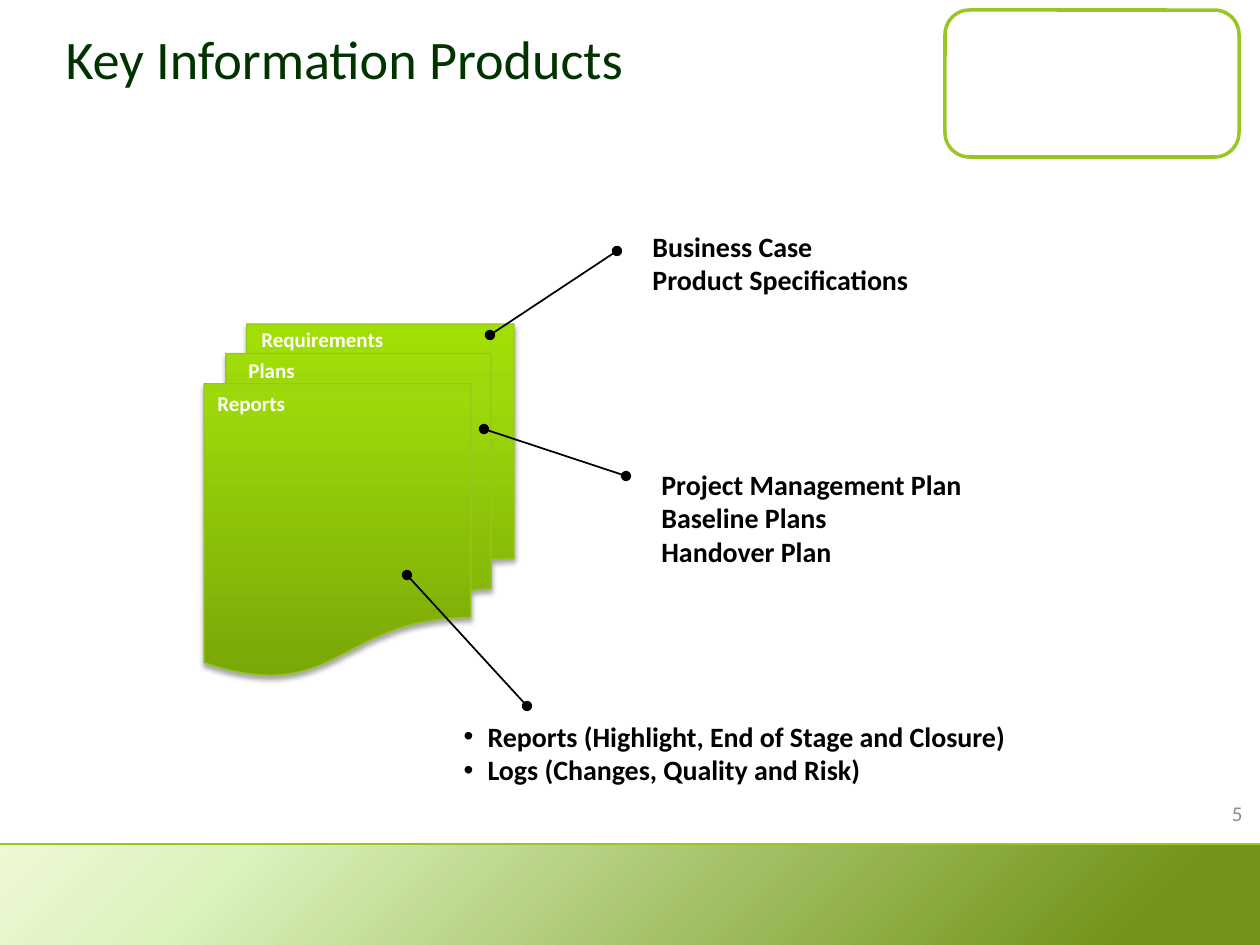
from dataclasses import dataclass

from lxml import etree
from pptx import Presentation
from pptx import util as u
from pptx.dml.color import RGBColor
from pptx.enum import shapes, text
from pptx.oxml.ns import qn

EMU_PER_PX = 914400 / 126


@dataclass(frozen=True)
class Theme:
    font: str = "Calibri"
    title_size: float = 31
    body_size: float = 16
    small_size: float = 12
    title: str = "003300"
    ink: str = "000000"
    paper: str = "FFFFFF"
    muted: str = "8C8C8C"
    accent: str = "98C723"
    edge: str = "96C71E"
    band: tuple = ((0, "EEF8D5"), (19, "DAF2BC"), (89, "72951A"))
    pages: tuple = ((0, "79A708"), (80, "9DD90A"), (100, "A0DE06"))


def px(*lengths):
    return [u.Emu(round(n * EMU_PER_PX)) for n in lengths]


def child(parent, tag, **attributes):
    return etree.SubElement(parent, qn(tag), {k: str(v) for k, v in attributes.items()})


def write(frame, lines, *, font, size, color, bold=False, align=text.PP_ALIGN.LEFT,
          anchor=text.MSO_ANCHOR.TOP, wrap=True, bullet_indent=0):
    """Fill a text frame with one paragraph per line."""
    frame.auto_size = text.MSO_AUTO_SIZE.NONE
    frame.word_wrap = wrap
    frame.vertical_anchor = anchor
    for i, line in enumerate(lines):
        paragraph = frame.paragraphs[0] if i == 0 else frame.add_paragraph()
        paragraph.alignment = align
        paragraph.space_before = u.Pt(0)
        if bullet_indent:
            indent = px(bullet_indent)[0]
            properties = paragraph._p.get_or_add_pPr()
            properties.set("marL", str(indent))
            properties.set("indent", str(-indent))
            child(properties, "a:buFont", typeface="Arial")
            child(properties, "a:buChar", char="•")
        run = paragraph.add_run()
        run.text = line
        run.font.name = font
        run.font.size = u.Pt(size)
        run.font.bold = bold
        run.font.color.rgb = RGBColor.from_string(color)


class SlideBuilder:
    def __init__(self, slide, theme):
        self.slide = slide
        self.theme = theme

    def placeholder(self, index, box, lines, **style):
        holder = self.slide.placeholders[index]
        holder.left, holder.top, holder.width, holder.height = px(*box)
        write(holder.text_frame, lines, font=self.theme.font, **style)

    def label(self, box, lines, **style):
        frame = self.slide.shapes.add_textbox(*px(*box)).text_frame
        write(frame, lines, font=self.theme.font, **style)

    def shape(self, kind, box, fill=None, gradient=(), angle=0, line=None, width=1):
        shape = self.slide.shapes.add_shape(kind, *px(*box))
        shape.shadow.inherit = False
        if gradient:
            shape.fill.gradient()
            shape.fill.gradient_angle = angle
            stops = shape.element.spPr.find(qn("a:gradFill")).find(qn("a:gsLst"))
            for stop in list(stops):
                stops.remove(stop)
            for position, color in gradient:
                stop = child(stops, "a:gs", pos=position * 1000)
                child(stop, "a:srgbClr", val=color)
        else:
            shape.fill.solid()
            shape.fill.fore_color.rgb = RGBColor.from_string(fill)
        if line:
            shape.line.color.rgb = RGBColor.from_string(line)
            shape.line.width = u.Pt(width)
        else:
            shape.line.fill.background()
        return shape

    def drop_shadow(self, shape, color, opacity, blur, distance):
        effects = shape.element.spPr.find(qn("a:effectLst"))
        shadow = child(effects, "a:outerShdw", blurRad=u.Pt(blur), dist=u.Pt(distance),
                       dir=90 * 60000, rotWithShape=0)
        child(child(shadow, "a:srgbClr", val=color), "a:alpha", val=opacity * 1000)

    def line(self, start, end, color, width, dots=False):
        connector = self.slide.shapes.add_connector(
            shapes.MSO_CONNECTOR.STRAIGHT, *px(*start, *end))
        connector.line.color.rgb = RGBColor.from_string(color)
        connector.line.width = u.Pt(width)
        if dots:
            outline = connector.line._get_or_add_ln()
            for tag in ("a:headEnd", "a:tailEnd"):
                child(outline, tag, type="oval")
        child(connector.element.spPr, "a:effectLst")


def main():
    theme = Theme()
    deck = Presentation()
    deck.slide_width, deck.slide_height = px(1260, 945)
    page = SlideBuilder(deck.slides.add_slide(deck.slide_layouts[1]), theme)
    preset = shapes.MSO_SHAPE

    # Frame and footer band
    page.shape(preset.ROUNDED_RECTANGLE, (945, 10, 294, 147),
               fill=theme.paper, line=theme.accent, width=2)
    page.shape(preset.RECTANGLE, (0, 845, 1260, 100), gradient=theme.band, angle=315)
    page.line((0, 844), (1260, 844), theme.accent, 1.5)

    # Title
    page.placeholder(0, (53, 0, 882, 116), ["Key Information Products"],
                     size=theme.title_size, color=theme.title,
                     anchor=text.MSO_ANCHOR.MIDDLE)

    # Stack of documents with a label on each sheet
    stack = page.shape(preset.FLOWCHART_MULTIDOCUMENT, (204, 324, 310, 352),
                       gradient=theme.pages, angle=90, line=theme.edge, width=0.75)
    page.drop_shadow(stack, theme.ink, opacity=35, blur=3.1, distance=1.8)
    for sheet, left, top, width in (("Requirements", 249, 320, 149),
                                    ("Plans", 236, 351, 72),
                                    ("Reports", 205, 384, 93)):
        page.label((left, top, width, 38), [sheet], size=theme.small_size,
                   color=theme.paper, bold=True, wrap=False)

    # Contents of each sheet
    detail = dict(size=theme.body_size, color=theme.ink, bold=True)
    page.label((640, 223, 483, 81), ["Business Case", "Product Specifications"], **detail)
    page.label((649, 461, 473, 115),
               ["Project Management Plan", "Baseline Plans", "Handover Plan"], **detail)
    page.placeholder(1, (451, 713, 688, 106),
                     ["Reports (Highlight, End of Stage and Closure)",
                      "Logs (Changes, Quality and Risk)"],
                     bullet_indent=24, **detail)

    # Callout lines from sheets to contents
    for sheet_point, content_point in (((490, 335), (617, 251)),
                                       ((484, 429), (626, 476)),
                                       ((407, 575), (527, 706))):
        page.line(sheet_point, content_point, theme.ink, 1, dots=True)

    # Slide number
    page.label((961, 788, 294, 50), ["5"], size=theme.small_size, color=theme.muted,
               align=text.PP_ALIGN.RIGHT, anchor=text.MSO_ANCHOR.MIDDLE)

    deck.save("out.pptx")


if __name__ == "__main__":
    main()
